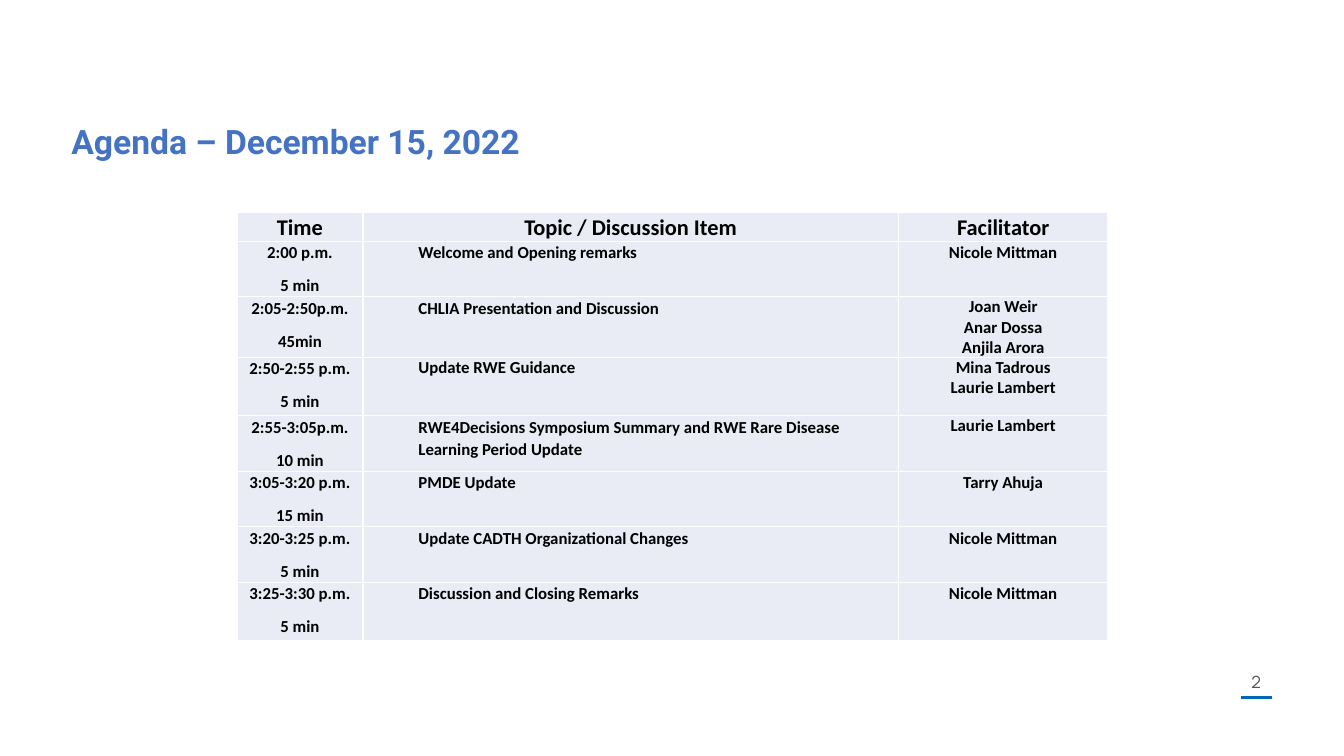
from lxml.etree import SubElement
from pptx import Presentation
from pptx.dml.color import RGBColor
from pptx.enum.shapes import MSO_CONNECTOR
from pptx.enum.text import MSO_ANCHOR, PP_ALIGN
from pptx.oxml.ns import qn
from pptx.util import Inches, Pt

WHITE = RGBColor(0xFF, 0xFF, 0xFF)
BLACK = RGBColor(0x00, 0x00, 0x00)
TITLE_BLUE = RGBColor(0x44, 0x72, 0xC4)
RULE_BLUE = RGBColor(0x00, 0x67, 0xB9)
NUMBER_GRAY = RGBColor(0x54, 0x54, 0x54)
CELL_FILL = RGBColor(0xE9, 0xEB, 0xF5)

COLUMN_WIDTHS = [1.25, 5.31, 2.08]
ROW_HEIGHTS = [0.28, 0.55, 0.55, 0.58, 0.55, 0.55, 0.55, 0.58]
HEADINGS = ["Time", "Topic / Discussion Item", "Facilitator"]
AGENDA = [
    (["2:00 p.m.", "5 min"], "Welcome and Opening remarks", ["Nicole Mittman"]),
    (["2:05-2:50p.m.", "45min"], "CHLIA Presentation and Discussion",
     ["Joan Weir", "Anar Dossa", "Anjila Arora"]),
    (["2:50-2:55 p.m.", "5 min"], "Update RWE Guidance",
     ["Mina Tadrous", "Laurie Lambert"]),
    (["2:55-3:05p.m.", "10 min"],
     "RWE4Decisions Symposium Summary and RWE Rare Disease Learning Period Update",
     ["Laurie Lambert"]),
    (["3:05-3:20 p.m.", "15 min"], "PMDE Update", ["Tarry Ahuja"]),
    (["3:20-3:25 p.m.", "5 min"], "Update CADTH Organizational Changes",
     ["Nicole Mittman"]),
    (["3:25-3:30 p.m.", "5 min"], "Discussion and Closing Remarks",
     ["Nicole Mittman"]),
]
TIGHT_TOPICS = {3}
TIGHT_FACILITATORS = {2, 3, 4}


def add_run(paragraph, text, font_name, size, color, bold=False):
    run = paragraph.add_run()
    run.text = text
    run.font.name = font_name
    run.font.size = Pt(size)
    run.font.color.rgb = color
    run.font.bold = bold


def add_text(slide, position, text, font_name, size, color, bold=False,
             alignment=PP_ALIGN.LEFT, anchor=MSO_ANCHOR.TOP):
    shape = slide.shapes.add_textbox(*map(Inches, position))
    text_frame = shape.text_frame
    text_frame.word_wrap = True
    text_frame.vertical_anchor = anchor
    paragraph = text_frame.paragraphs[0]
    paragraph.alignment = alignment
    add_run(paragraph, text, font_name, size, color, bold)


def add_rule(slide, left, right, top):
    connector = slide.shapes.add_connector(
        MSO_CONNECTOR.STRAIGHT, Inches(left), Inches(top), Inches(right), Inches(top))
    connector.line.color.rgb = RULE_BLUE
    connector.line.width = Pt(2.25)
    SubElement(connector._element.spPr, qn("a:effectLst"))


def add_borders(cell):
    properties = cell._tc.get_or_add_tcPr()
    for side in ("lnL", "lnR", "lnT", "lnB"):
        border = SubElement(properties, qn(f"a:{side}"), w=str(Pt(1)))
        fill = SubElement(border, qn("a:solidFill"))
        SubElement(fill, qn("a:srgbClr"), val=str(WHITE))


def fill_cell(cell, lines, size=12, indented=False, tight=False):
    add_borders(cell)
    cell.fill.solid()
    cell.fill.fore_color.rgb = CELL_FILL
    cell.margin_left = cell.margin_right = Inches(0.05)
    cell.margin_top = cell.margin_bottom = 0
    for index, line in enumerate(lines):
        text_frame = cell.text_frame
        paragraph = text_frame.add_paragraph() if index else text_frame.paragraphs[0]
        if indented:
            paragraph._p.get_or_add_pPr().set("marL", str(Inches(0.5)))
        else:
            paragraph.alignment = PP_ALIGN.CENTER
        if not tight:
            paragraph.line_spacing = 1.07
            paragraph.space_after = Pt(8)
        add_run(paragraph, line, "Calibri", size, BLACK, bold=True)


def add_agenda(slide):
    table = slide.shapes.add_table(
        len(ROW_HEIGHTS), len(COLUMN_WIDTHS), Inches(2.35), Inches(2.11),
        Inches(sum(COLUMN_WIDTHS)), Inches(sum(ROW_HEIGHTS))).table
    for column, width in zip(table.columns, COLUMN_WIDTHS):
        column.width = Inches(width)
    for row, height in zip(table.rows, ROW_HEIGHTS):
        row.height = Inches(height)
    for index, heading in enumerate(HEADINGS):
        fill_cell(table.cell(0, index), [heading], size=16)
    for index, (times, topic, facilitators) in enumerate(AGENDA, start=1):
        fill_cell(table.cell(index, 0), times)
        fill_cell(table.cell(index, 1), [topic], indented=True,
                  tight=index in TIGHT_TOPICS)
        fill_cell(table.cell(index, 2), facilitators,
                  tight=index in TIGHT_FACILITATORS)


def main():
    presentation = Presentation()
    presentation.slide_width = Inches(13.33)
    presentation.slide_height = Inches(7.5)
    slide = presentation.slides.add_slide(presentation.slide_layouts[6])
    add_rule(slide, 12.31, 12.62, 6.92)
    add_text(slide, (0.61, 1.15, 9.64, 0.96), "Agenda – December 15, 2022",
             "Roboto", 24, TITLE_BLUE, bold=True)
    add_text(slide, (12.21, 6.63, 0.5, 0.26), "2", "Manrope", 12, NUMBER_GRAY,
             alignment=PP_ALIGN.CENTER, anchor=MSO_ANCHOR.MIDDLE)
    add_agenda(slide)
    presentation.save("out.pptx")


if __name__ == "__main__":
    main()
